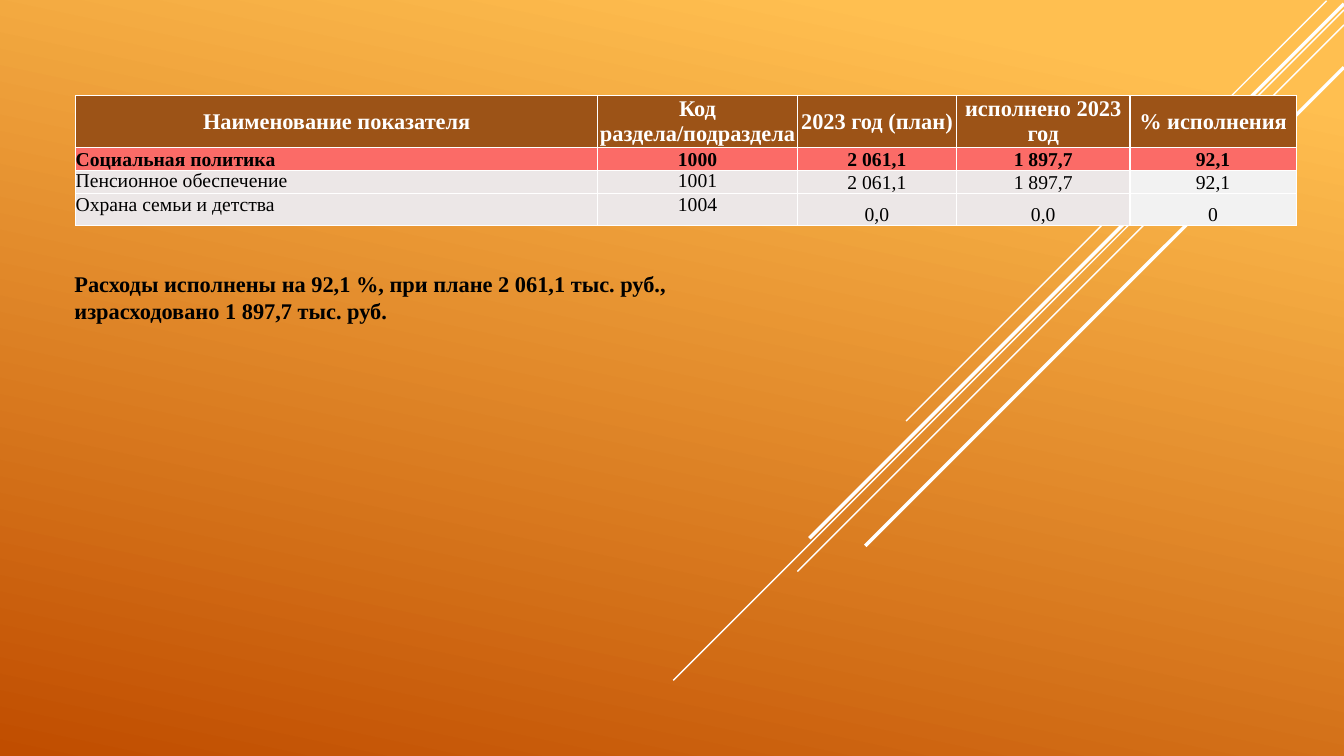
"""Builds a slide with a table of social policy spending and a summary line."""
import pptx
import pptx.dml.color
import pptx.enum.shapes
import pptx.enum.text
import pptx.oxml
import pptx.oxml.ns
import pptx.util

COLORS = {
    "light": "FFBF50", "dark": "C04D00", "white": "FFFFFF", "black": "000000",
    "header": "9C5317", "total": "FB6B67", "row": "ECE7E7", "share": "F2F2F2",
}
ALIGN = pptx.enum.text.PP_ALIGN
ANCHOR = pptx.enum.text.MSO_ANCHOR


def rgb(name):
    return pptx.dml.color.RGBColor.from_string(COLORS[name])


def write(tf, text, size=14, color="black", bold=False, align=ALIGN.LEFT):
    p = tf.paragraphs[0]
    p.alignment = align
    r = p.add_run()
    r.text = text
    r.font.name = "Times New Roman"
    r.font.size = pptx.util.Pt(size)
    r.font.bold = bold
    r.font.color.rgb = rgb(color)


prs = pptx.Presentation()
prs.slide_width = pptx.util.Inches(13.33)
prs.slide_height = pptx.util.Inches(7.5)
W, H = prs.slide_width / 100, prs.slide_height / 100
slide = prs.slides.add_slide(prs.slide_layouts[6])

bg = slide.background.fill
bg.gradient()
bg.gradient_angle = 258
for stop, (position, color) in zip(bg.gradient_stops, [(0.1, "light"), (1, "dark")]):
    stop.position = position
    stop.color.rgb = rgb(color)

# Diagonals run at 45 degrees: start x (% of width), start y and run (% of height), weight.
diagonals = [
    (98.7, 0.1, 55.6, 1),
    (100, 1.3, 88.7, 1),
    (100, 3.3, 72.3, 1),
    (100, 0.5, 70.7, 2.5),
    (100, 8.9, 63.3, 2.5),
]
for x, y, run, weight in diagonals:
    line = slide.shapes.add_connector(
        pptx.enum.shapes.MSO_CONNECTOR.STRAIGHT,
        int(x * W), int(y * H), int(x * W - run * H), int((y + run) * H))
    line.line.color.rgb = rgb("white")
    line.line.width = pptx.util.Pt(weight)
    line._element.spPr.append(pptx.oxml.parse_xml(
        f'<a:effectLst {pptx.oxml.ns.nsdecls("a")}/>'))

rows = [
    ["Наименование показателя", "Код раздела/подраздела", "2023 год (план)",
     "исполнено 2023 год", "% исполнения"],
    ["Социальная политика", "1000", "2 061,1", "1 897,7", "92,1"],
    ["Пенсионное обеспечение", "1001", "2 061,1", "1 897,7", "92,1"],
    ["Охрана семьи и детства", "1004", "0,0", "0,0", "0"],
]
col_widths = [38.85, 14.85, 11.85, 12.9, 12.38]
row_heights = [6.8, 3.07, 3.07, 4.27]
table = slide.shapes.add_table(
    len(rows), len(col_widths), int(5.63 * W), int(12.67 * H),
    int(sum(col_widths) * W), int(sum(row_heights) * H)).table
for col, width in zip(table.columns, col_widths):
    col.width = int(width * W)
for row, height in zip(table.rows, row_heights):
    row.height = int(height * H)

for i, row in enumerate(rows):
    for j, text in enumerate(row):
        cell = table.cell(i, j)
        cell.margin_left = cell.margin_right = cell.margin_top = cell.margin_bottom = 0
        size, color, align = 14, "black", ALIGN.CENTER
        if i == 0:
            fill, size, color, anchor = "header", 16, "white", ANCHOR.MIDDLE
        elif i == 1:
            fill, anchor = "total", ANCHOR.BOTTOM
        else:
            fill = "share" if j == 4 else "row"
            anchor = ANCHOR.TOP if j < 2 else ANCHOR.BOTTOM
        if i > 0 and j == 0:
            align = ALIGN.LEFT if i == 1 else ALIGN.JUSTIFY
        cell.vertical_anchor = anchor
        write(cell.text_frame, text, size=size, color=color, bold=i < 2, align=align)
        cell.fill.solid()
        cell.fill.fore_color.rgb = rgb(fill)
        for k, side in enumerate(["lnL", "lnR", "lnT", "lnB"]):
            cell._tc.tcPr.insert(k, pptx.oxml.parse_xml(
                f'<a:{side} {pptx.oxml.ns.nsdecls("a")} w="12700"><a:solidFill>'
                f'<a:srgbClr val="{COLORS["white"]}"/></a:solidFill></a:{side}>'))

summary = slide.shapes.add_textbox(int(4.8 * W), int(35.07 * H), int(50.04 * W), int(8.53 * H))
tf = summary.text_frame
tf.word_wrap = True
tf.auto_size = pptx.enum.text.MSO_AUTO_SIZE.SHAPE_TO_FIT_TEXT
write(tf, "Расходы исполнены на 92,1 %, при плане 2 061,1 тыс. руб., "
      "израсходовано 1 897,7 тыс. руб.", size=16, bold=True)

prs.save("out.pptx")
